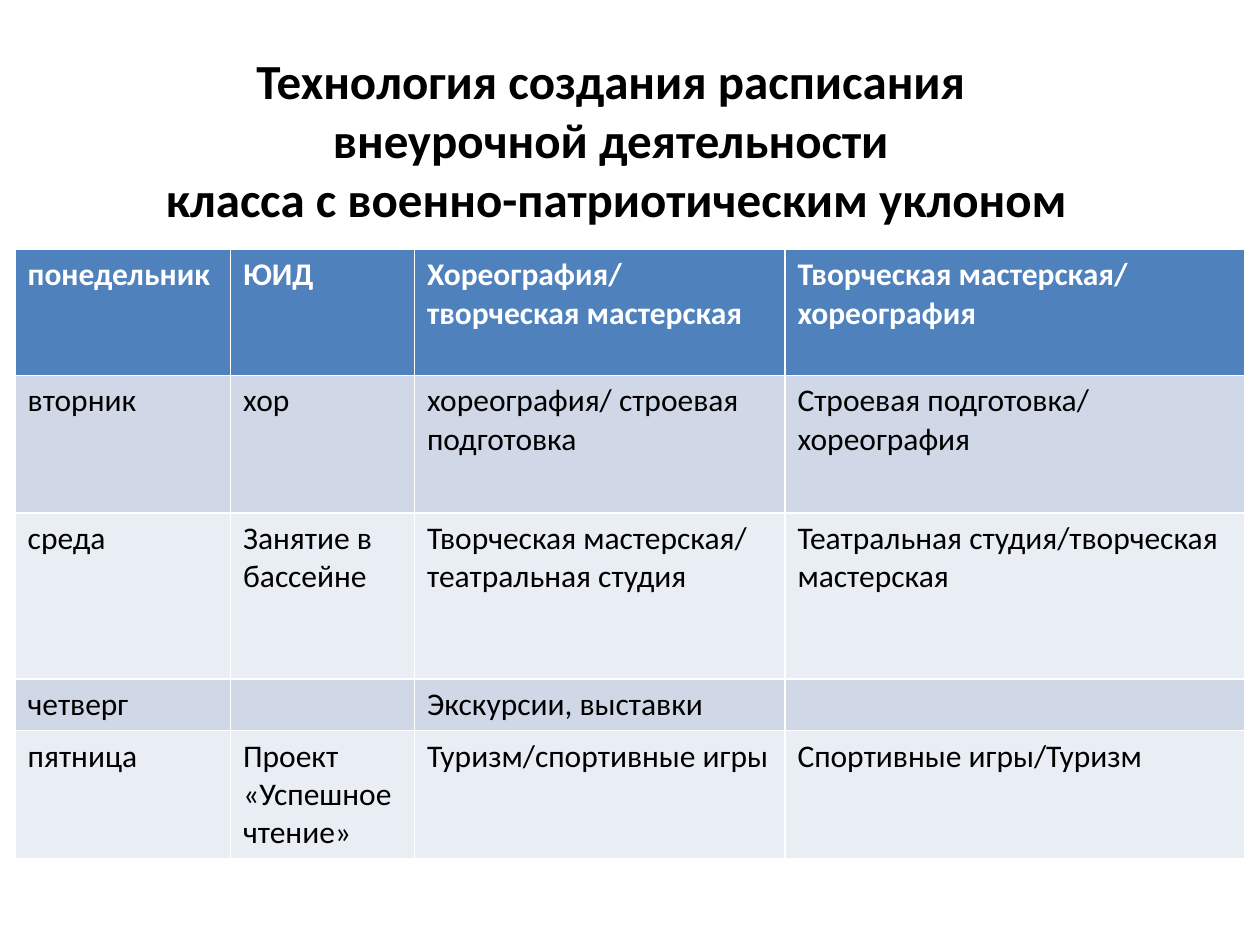
from dataclasses import dataclass

from pptx import Presentation
from pptx.dml.color import RGBColor as Color
from pptx.enum.text import MSO_ANCHOR as Anchor, MSO_AUTO_SIZE as AutoSize, PP_ALIGN as Align
from pptx.util import Inches, Pt


@dataclass(frozen=True)
class Theme:
    font: str = "Calibri"
    title_size: int = 28
    table_size: int = 18
    text: str = "000000"
    header_text: str = "FFFFFF"
    header_fill: str = "4F81BD"
    band_fills: tuple = ("D0D8E8", "E9EDF4")


class SlideBuilder:
    def __init__(self, page, theme):
        self.page = page
        self.theme = theme

    def format_text(self, frame, size, color, bold):
        for para in frame.paragraphs:
            for span in para.runs:
                span.font.name = self.theme.font
                span.font.size = Pt(size)
                span.font.bold = bold
                span.font.color.rgb = Color.from_string(color)

    def title(self, text, left, top, width, height):
        box = self.page.shapes.title
        box.left, box.top = Inches(left), Inches(top)
        box.width, box.height = Inches(width), Inches(height)
        frame = box.text_frame
        frame.text = text
        frame.word_wrap = True
        frame.auto_size = AutoSize.NONE
        frame.vertical_anchor = Anchor.MIDDLE
        frame.paragraphs[0].alignment = Align.CENTER
        self.format_text(frame, self.theme.title_size, self.theme.text, True)

    def table(self, rows, left, top, widths, heights):
        table = self.page.shapes.add_table(
            len(rows), len(widths), Inches(left), Inches(top),
            Inches(sum(widths)), Inches(sum(heights))).table
        for column, width in zip(table.columns, widths):
            column.width = Inches(width)
        for row, height in zip(table.rows, heights):
            row.height = Inches(height)
        for row_index, texts in enumerate(rows):
            for column_index, text in enumerate(texts):
                self.cell(table.cell(row_index, column_index), text, row_index)

    def cell(self, cell, text, row_index):
        theme = self.theme
        header = row_index == 0
        fill = theme.header_fill if header else theme.band_fills[(row_index - 1) % 2]
        color = theme.header_text if header else theme.text
        cell.fill.solid()
        cell.fill.fore_color.rgb = Color.from_string(fill)
        cell.text_frame.text = text
        self.format_text(cell.text_frame, theme.table_size, color, header)


SCHEDULE = [
    ["понедельник", "ЮИД", "Хореография/ творческая мастерская",
     "Творческая мастерская/ хореография"],
    ["вторник", "хор", "хореография/ строевая подготовка",
     "Строевая подготовка/\nхореография"],
    ["среда", "Занятие в бассейне", "Творческая мастерская/\nтеатральная студия",
     "Театральная студия/творческая мастерская"],
    ["четверг", "", "Экскурсии, выставки", ""],
    ["пятница", "Проект «Успешное чтение»", "Туризм/спортивные игры",
     "Спортивные игры/Туризм"],
]


def main():
    deck = Presentation()
    deck.slide_width, deck.slide_height = Inches(10), Inches(7.5)
    builder = SlideBuilder(deck.slides.add_slide(deck.slide_layouts[5]), Theme())
    builder.title(
        "Технология создания расписания \vвнеурочной деятельности \v"
        "класса с военно-патриотическим уклоном", 0.28, 0.13, 9.22, 1.95)
    builder.table(SCHEDULE, 0.12, 1.98, [1.71, 1.46, 2.94, 3.65],
                  [1, 1.09, 1.32, 0.41, 0.98])
    deck.save("out.pptx")


if __name__ == "__main__":
    main()
